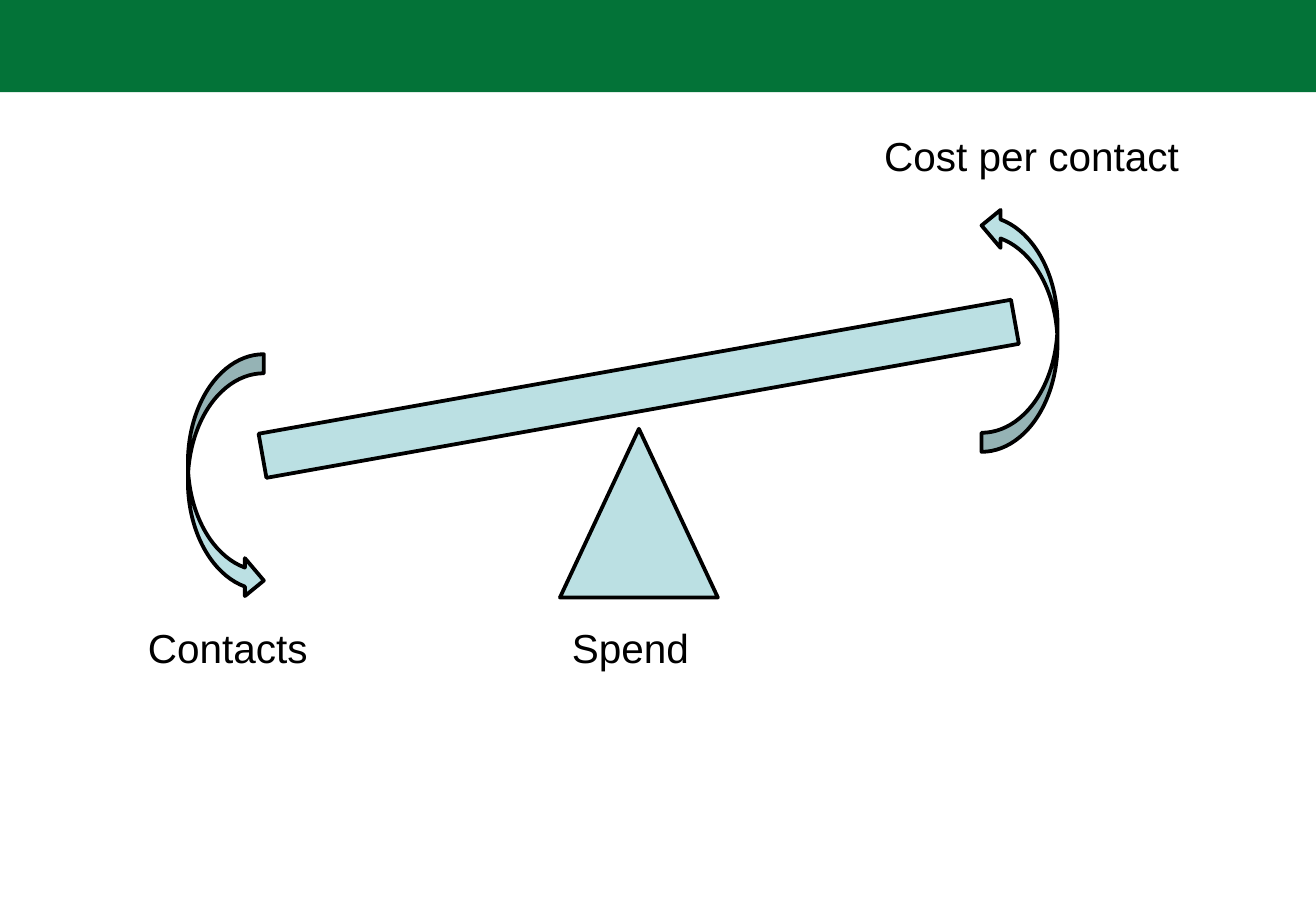
from dataclasses import dataclass

from pptx import Presentation
from pptx.dml.color import RGBColor
from pptx.enum.shapes import MSO_SHAPE
from pptx.enum.text import MSO_AUTO_SIZE
from pptx.slide import Slide
from pptx.util import Pt

COLOURS = {"banner": "037338", "seesaw": "BBE0E3", "ink": "000000"}
PAGE_WIDTH, PAGE_HEIGHT = 780, 540
LABEL_HEIGHT = 36.7
LOWER_LABEL_TOP = 365.8
ARROW_ADJUSTMENTS = (0.25, 0.5, 0.25)


@dataclass
class Figure:
    kind: MSO_SHAPE
    left: float
    top: float
    width: float
    height: float
    fill: str = "seesaw"
    outline: float = 2.25
    rotation: float = 0
    adjustments: tuple[float, ...] = ()


@dataclass
class Label:
    text: str
    left: float
    top: float
    width: float


BANNER = Figure(MSO_SHAPE.RECTANGLE, 0, 0, PAGE_WIDTH, 54.7, fill="banner", outline=0)
BEAM = Figure(MSO_SHAPE.RECTANGLE, 152.1, 217.2, 453, 26.6, rotation=349.9)
PIVOT = Figure(MSO_SHAPE.ISOSCELES_TRIANGLE, 331.9, 254.2, 93.6, 100)
DOWN_ARROW = Figure(MSO_SHAPE.CURVED_RIGHT_ARROW, 111.4, 210, 45, 145.4,
                    adjustments=ARROW_ADJUSTMENTS)
UP_ARROW = Figure(MSO_SHAPE.CURVED_RIGHT_ARROW, 581.8, 122.4, 45, 145.4,
                  rotation=180, adjustments=ARROW_ADJUSTMENTS)

LABELS = [
    Label("Contacts", 80.6, LOWER_LABEL_TOP, 147.6),
    Label("Spend", 331.9, LOWER_LABEL_TOP, 179.3),
    Label("Cost per contact", 517, 74.2, 198.7),
]


def colour(name: str) -> RGBColor:
    return RGBColor.from_string(COLOURS[name])


def draw_figure(page: Slide, figure: Figure) -> None:
    shape = page.shapes.add_shape(figure.kind, Pt(figure.left), Pt(figure.top),
                                  Pt(figure.width), Pt(figure.height))
    shape.shadow.inherit = False
    shape.rotation = figure.rotation
    for index, value in enumerate(figure.adjustments):
        shape.adjustments[index] = value
    shape.fill.solid()
    shape.fill.fore_color.rgb = colour(figure.fill)
    if figure.outline:
        shape.line.color.rgb = colour("ink")
        shape.line.width = Pt(figure.outline)
    else:
        shape.line.fill.background()


def write_text(page: Slide, text: str, *, left: float, top: float, width: float,
               height: float = LABEL_HEIGHT, size: float = 24,
               font: str = "Arial", ink: str = "ink") -> None:
    box = page.shapes.add_textbox(Pt(left), Pt(top), Pt(width), Pt(height))
    frame = box.text_frame
    frame.word_wrap = True
    frame.auto_size = MSO_AUTO_SIZE.SHAPE_TO_FIT_TEXT
    span = frame.paragraphs[0].add_run()
    span.text = text
    span.font.name = font
    span.font.size = Pt(size)
    span.font.color.rgb = colour(ink)


def main() -> None:
    deck = Presentation()
    deck.slide_width, deck.slide_height = Pt(PAGE_WIDTH), Pt(PAGE_HEIGHT)
    page = deck.slides.add_slide(deck.slide_layouts.get_by_name("Blank"))
    for figure in (BANNER, BEAM, PIVOT, DOWN_ARROW, UP_ARROW):
        draw_figure(page, figure)
    for label in LABELS:
        write_text(page, label.text, left=label.left, top=label.top, width=label.width)
    deck.save("out.pptx")


if __name__ == "__main__":
    main()
